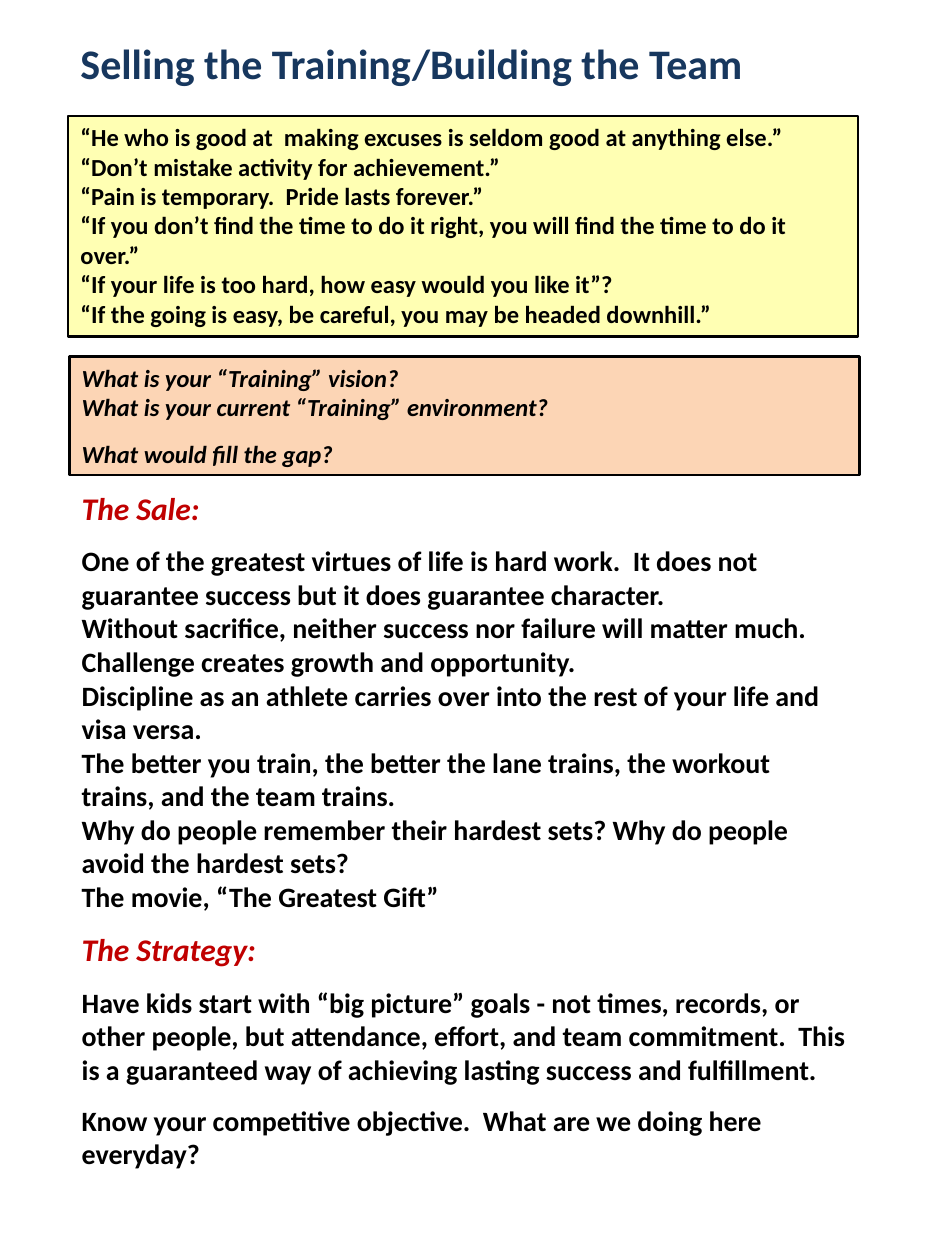
from dataclasses import dataclass
from typing import Optional

from pptx import Presentation
from pptx.dml.color import RGBColor
from pptx.enum.shapes import MSO_SHAPE
from pptx.enum.text import MSO_ANCHOR, PP_ALIGN
from pptx.util import Inches, Pt

RECTANGLE = MSO_SHAPE.RECTANGLE
TOP = MSO_ANCHOR.TOP
LEFT = PP_ALIGN.LEFT


@dataclass(frozen=True)
class Theme:
    font: str = "Calibri"
    navy: str = "17375E"
    red: str = "C00000"
    black: str = "000000"
    yellow: str = "FFFFB3"
    peach: str = "FCD5B5"
    title_size: float = 24
    heading_size: float = 18
    body_size: float = 16
    box_size: float = 14
    gap: float = 9.8
    border: float = 1.5


THEME = Theme()


@dataclass(frozen=True)
class Style:
    size: float
    color: str = THEME.black
    italic: bool = False


@dataclass(frozen=True)
class Line:
    text: str
    style: Style
    gap_before: float = 0


@dataclass(frozen=True)
class Panel:
    """A block of lines; place is left, top, width, height in inches."""
    place: tuple[float, float, float, float]
    lines: list[Line]
    fill: Optional[str] = None


TITLE = Style(THEME.title_size, THEME.navy)
HEADING = Style(THEME.heading_size, THEME.red, italic=True)
BODY = Style(THEME.body_size)
QUOTE = Style(THEME.box_size)
QUESTION = Style(THEME.box_size, italic=True)

QUOTES = [
    "“He who is good at  making excuses is seldom good at anything else.”",
    "“Don’t mistake activity for achievement.”",
    "“Pain is temporary.  Pride lasts forever.”",
    "“If you don’t find the time to do it right, you will find the time to do it over.”",
    "“If your life is too hard, how easy would you like it”?",
    "“If the going is easy, be careful, you may be headed downhill.”",
]

PANELS = [
    Panel((0.54, 0.25, 5.71, 0.5),
          [Line("Selling the Training/Building the Team", TITLE)]),
    Panel((0.54, 0.92, 6.27, 1.75),
          [Line(quote, QUOTE) for quote in QUOTES], THEME.yellow),
    Panel((0.55, 2.83, 6.27, 0.94), [
        Line("What is your “Training” vision?", QUESTION),
        Line("What is your current “Training” environment?", QUESTION),
        Line("What would fill the gap?", QUESTION, THEME.gap),
    ], THEME.peach),
    Panel((0.55, 3.83, 6.28, 5.89), [
        Line("The Sale:", HEADING),
        Line("One of the greatest virtues of life is hard work.  It does not "
             "guarantee success but it does guarantee character.", BODY, THEME.gap),
        Line("Without sacrifice, neither success nor failure will matter much.", BODY),
        Line("Challenge creates growth and opportunity.", BODY),
        Line("Discipline as an athlete carries over into the rest of your life "
             "and visa versa.", BODY),
        Line("The better you train, the better the lane trains, the workout "
             "trains, and the team trains.", BODY),
        Line("Why do people remember their hardest sets? Why do people avoid "
             "the hardest sets?", BODY),
        Line("The movie, “The Greatest Gift”", BODY),
        Line("The Strategy:", HEADING, THEME.gap),
        Line("Have kids start with “big picture” goals - not times, records, or "
             "other people, but attendance, effort, and team commitment.  This is "
             "a guaranteed way of achieving lasting success and fulfillment.",
             BODY, THEME.gap),
        Line("Know your competitive objective.  What are we doing here everyday?",
             BODY, THEME.gap),
    ]),
]


def write_lines(frame, lines: list[Line]) -> None:
    frame.word_wrap = True
    frame.vertical_anchor = TOP
    for index, line in enumerate(lines):
        paragraph = frame.add_paragraph() if index else frame.paragraphs[0]
        paragraph.text = line.text
        paragraph.alignment = LEFT
        paragraph.space_before = Pt(line.gap_before)
        font = paragraph.font
        font.name = THEME.font
        font.size = Pt(line.style.size)
        font.bold = True
        font.italic = line.style.italic
        font.color.rgb = RGBColor.from_string(line.style.color)


def draw_panel(slide, panel: Panel) -> None:
    """Draw a bordered box when the panel has a fill, else a plain text box."""
    place = [Inches(length) for length in panel.place]
    if panel.fill:
        box = slide.shapes.add_shape(RECTANGLE, *place)
        box.shadow.inherit = False
        box.fill.solid()
        box.fill.fore_color.rgb = RGBColor.from_string(panel.fill)
        box.line.color.rgb = RGBColor.from_string(THEME.black)
        box.line.width = Pt(THEME.border)
    else:
        box = slide.shapes.add_textbox(*place)
    write_lines(box.text_frame, panel.lines)


def main() -> None:
    deck = Presentation()
    deck.slide_width = Inches(7.5)
    deck.slide_height = Inches(10)
    slide = deck.slides.add_slide(deck.slide_layouts[6])
    for panel in PANELS:
        draw_panel(slide, panel)
    deck.save("out.pptx")


if __name__ == "__main__":
    main()
